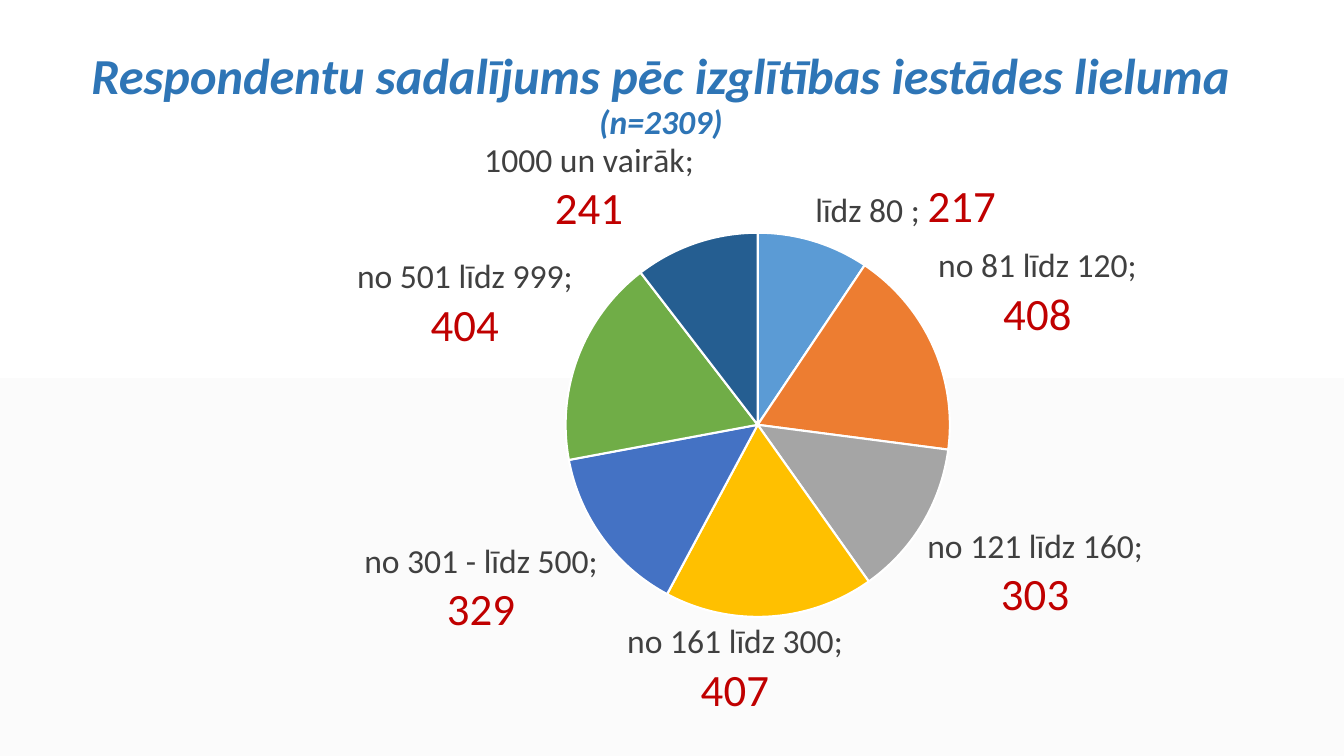
import pptx
import pptx.util
import pptx.dml.color
import pptx.chart.data
import pptx.enum.chart
import pptx.enum.text
import lxml.etree

Inches = pptx.util.Inches
Pt = pptx.util.Pt

COLORS = {"top": "FFFFFF", "base": "FBFBFB", "title": "2E75B6",
          "text": "404040", "value": "C00000", "line": "FFFFFF"}
SLICES = ["5B9BD5", "ED7D31", "A5A5A5", "FFC000", "4472C4", "70AD47", "255E91"]
SIZES = {"līdz 80 ": 217, "no 81 līdz 120": 408, "no 121 līdz 160": 303,
         "no 161 līdz 300": 407, "no 301 - līdz 500": 329,
         "no 501 līdz 999": 404, "1000 un vairāk": 241}


def rgb(code):
    return pptx.dml.color.RGBColor.from_string(code)


def layout(parent, index, **places):
    """Insert a manual layout with the given fractions of the chart."""
    ns = "{http://schemas.openxmlformats.org/drawingml/2006/chart}"
    for old in parent.findall(ns + "layout"):
        parent.remove(old)
    outer = lxml.etree.Element(ns + "layout")
    parent.insert(index, outer)
    manual = lxml.etree.SubElement(outer, ns + "manualLayout")
    for key, val in places.items():
        lxml.etree.SubElement(manual, ns + key).set("val", str(val))


class Deck:
    font = "Calibri"

    def __init__(self, show):
        self.slide = show.slides.add_slide(show.slide_layouts[5])

    def style(self, font, size, color):
        font.name, font.size = self.font, Pt(size)
        font.color.rgb = rgb(color)

    def back(self, *codes):
        fill = self.slide.background.fill
        fill.gradient()
        fill.gradient_angle = 270
        for stop, code in zip(fill.gradient_stops, codes):
            stop.color.rgb = rgb(code)

    def title(self, main, note, *box):
        shape = self.slide.shapes.title
        shape.left, shape.top, shape.width, shape.height = map(Inches, box)
        frame = shape.text_frame
        frame.word_wrap = True
        frame.auto_size = pptx.enum.text.MSO_AUTO_SIZE.NONE
        frame.vertical_anchor = pptx.enum.text.MSO_ANCHOR.MIDDLE
        para = frame.paragraphs[0]
        para.alignment = pptx.enum.text.PP_ALIGN.CENTER
        para.line_spacing = 0.9
        for text, size in ((main, 36), (note, 24)):
            run = para.add_run()
            run.text = text
            self.style(run.font, size, COLORS["title"])
            run.font.bold = run.font.italic = True

    def label(self, point, name, value):
        label = point.data_label
        para = label.text_frame.paragraphs[0]
        for text, size, color in ((name + "; ", 24, "text"),
                                  (str(value), 32, "value")):
            run = para.add_run()
            run.text = text
            self.style(run.font, size, COLORS[color])
        label.position = pptx.enum.chart.XL_LABEL_POSITION.OUTSIDE_END

    def pie(self, values, *box):
        data = pptx.chart.data.CategoryChartData()
        data.categories = list(values)
        data.add_series("Series 1", list(values.values()))
        chart = self.slide.shapes.add_chart(
            pptx.enum.chart.XL_CHART_TYPE.PIE, *map(Inches, box), data).chart
        chart.has_title = chart.has_legend = False
        self.style(chart.font, 10, "000000")
        plot = chart.plots[0]
        plot.vary_by_categories = True

        # Labels common to all slices
        plot.has_data_labels = True
        labels = plot.series[0].data_labels
        labels.show_value = labels.show_category_name = True
        labels.position = pptx.enum.chart.XL_LABEL_POSITION.OUTSIDE_END
        self.style(labels.font, 24, COLORS["text"])

        # Slices and their own labels
        for i, (name, value) in enumerate(values.items()):
            point = plot.series[0].points[i]
            point.format.fill.solid()
            point.format.fill.fore_color.rgb = rgb(SLICES[i])
            point.format.line.color.rgb = rgb(COLORS["line"])
            point.format.line.width = Pt(1.5)
            self.label(point, name, value)

        # Pie area, the shifted bottom label and text wrap
        root = chart.element if hasattr(chart, "element") else chart._chartSpace
        area = root.xpath("c:chart/c:plotArea")[0]
        layout(area, 0, layoutTarget="inner", xMode="edge", yMode="edge",
               x=0.37, y=0.18, w=0.33, h=0.63)
        low = root.xpath(".//c:dLbl[c:idx/@val='3']")[0]
        layout(low, 1, x=-0.03, y=0)
        for body in root.xpath(".//a:bodyPr"):
            body.set("wrap", "square")


def main():
    show = pptx.Presentation()
    show.slide_width, show.slide_height = Inches(13.33), Inches(7.5)
    deck = Deck(show)
    deck.back(COLORS["top"], COLORS["base"])
    deck.title("Respondentu sadalījums pēc izglītības iestādes lieluma ",
               "(n=2309)", 0.52, 0.23, 12.07, 1.45)
    deck.pie(SIZES, 1.31, 1.22, 11.6, 6.05)
    show.save("out.pptx")


if __name__ == "__main__":
    main()
